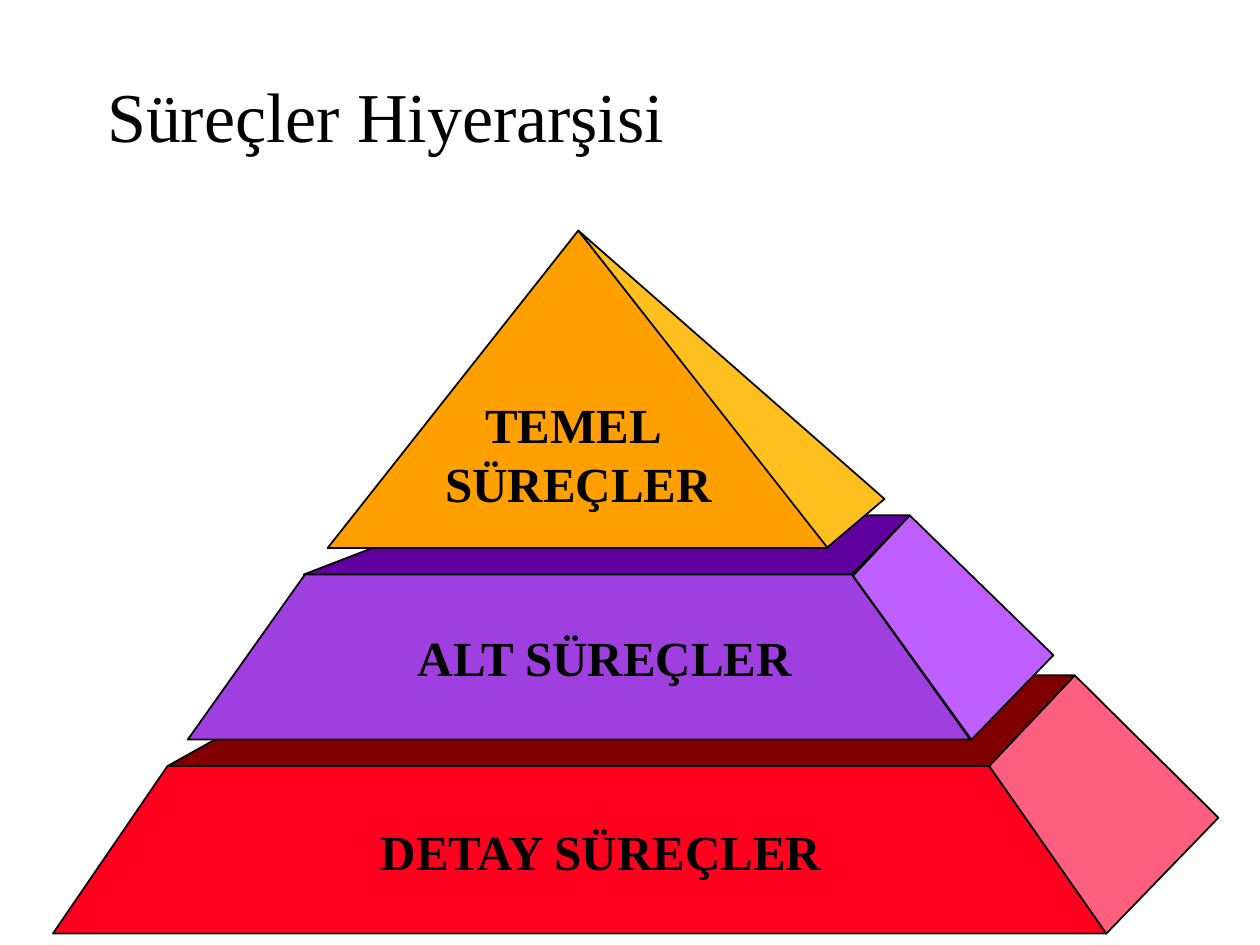
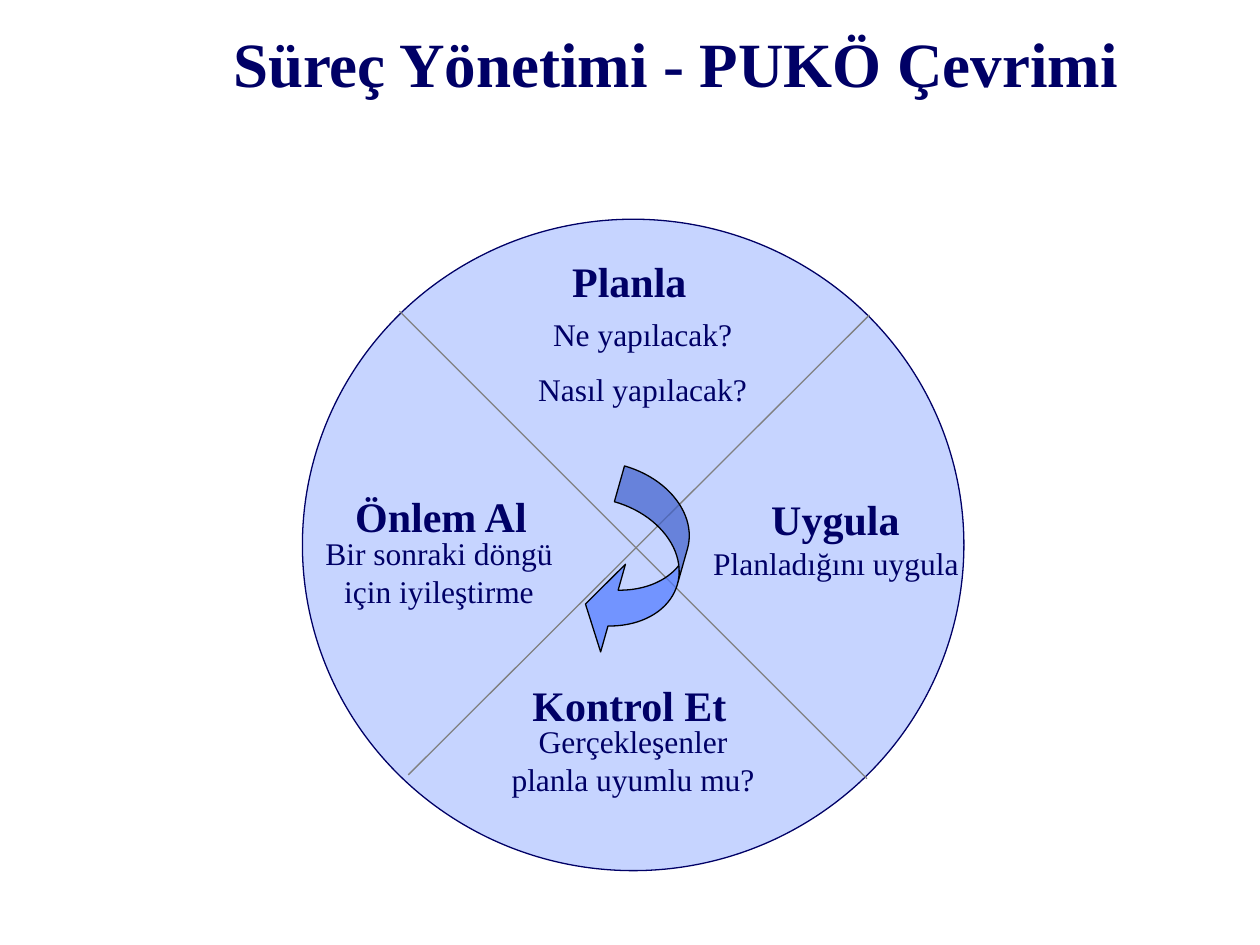
from lxml import etree
from pptx import Presentation
from pptx.dml.color import RGBColor
from pptx.enum.shapes import MSO_CONNECTOR, MSO_SHAPE
from pptx.enum.text import MSO_ANCHOR, MSO_AUTO_SIZE, PP_ALIGN
from pptx.oxml.ns import qn
from pptx.util import Inches, Pt

FONT = "Times New Roman"
COLORS = {
    "black": "000000", "navy": "000066", "gray": "808080",
    "circle": "8FAAFF", "arrow": "4F79FF",
    "detail_side": "FF5F7F", "detail_top": "800000", "detail_front": "FF001F",
    "sub_side": "BF5FFF", "sub_top": "5F009F", "sub_front": "9F3FDF",
    "main_side": "FFBF1F", "main_front": "FF9F00",
}


def paint(shape, fill, line, width, opacity=100):
    """Give a shape a solid fill, with opacity in percent, and an outline."""
    shape.shadow.inherit = False
    shape.fill.solid()
    shape.fill.fore_color.rgb = RGBColor.from_string(COLORS[fill])
    if opacity < 100:
        color = shape.fill._xPr.find(qn("a:solidFill"))[0]
        etree.SubElement(color, qn("a:alpha"), val=str(opacity * 1000))
    shape.line.color.rgb = RGBColor.from_string(COLORS[line])
    shape.line.width = Pt(width)


def write(shape, text, size, color, bold=False, align=PP_ALIGN.CENTER, gap=0):
    """Fill a shape with one paragraph per line; gap is the space between them."""
    text_frame = shape.text_frame
    text_frame.text = text
    for index, paragraph in enumerate(text_frame.paragraphs):
        paragraph.alignment = align
        paragraph.space_before = Pt(gap if index else 0)
        for run in paragraph.runs:
            run.font.name = FONT
            run.font.size = Pt(size)
            run.font.bold = bold
            run.font.color.rgb = RGBColor.from_string(COLORS[color])


presentation = Presentation()
presentation.slide_width = Inches(10)
presentation.slide_height = Inches(7.5)

# Slides and titles
titles = [
    ("Süreçler Hiyerarşisi", (0.75, 0.28, 8.5, 1.25), 40, "black", False),
    ("Süreç Yönetimi - PUKÖ Çevrimi", (1.75, 0.08, 7.67, 0.83), 36, "navy", True),
]
slides = []
for text, box, size, color, bold in titles:
    slide = presentation.slides.add_slide(presentation.slide_layouts[5])
    title = slide.shapes.title
    title.left, title.top, title.width, title.height = map(Inches, box)
    title.text_frame.vertical_anchor = MSO_ANCHOR.MIDDLE
    title.text_frame.auto_size = MSO_AUTO_SIZE.NONE
    write(title, text, size, color, bold, PP_ALIGN.LEFT)
    slides.append(slide)
pyramid_slide, cycle_slide = slides

# Pyramid faces, from back to front
faces = [
    ("detail_side", [(8.78, 7.41), (7.85, 6.08), (8.53, 5.36), (9.67, 6.49)]),
    ("detail_top", [(1.33, 6.08), (7.85, 6.08), (8.53, 5.36), (2.62, 5.36)]),
    ("detail_front", [(0.42, 7.41), (8.78, 7.41), (7.85, 6.08), (1.33, 6.08)]),
    ("sub_side", [(6.77, 4.57), (7.71, 5.87), (8.36, 5.2), (7.22, 4.09)]),
    ("sub_top", [(2.41, 4.56), (6.76, 4.56), (7.22, 4.09), (3.63, 4.09)]),
    ("sub_front", [(1.49, 5.87), (7.7, 5.87), (6.76, 4.56), (2.42, 4.56)]),
    ("main_side", [(6.56, 4.35), (7.02, 3.96), (4.59, 1.83)]),
    ("main_front", [(2.6, 4.35), (6.57, 4.35), (4.59, 1.83)]),
]
for fill, corners in faces:
    points = [(Inches(x), Inches(y)) for x, y in corners]
    builder = pyramid_slide.shapes.build_freeform(*points[0])
    builder.add_line_segments(points[1:], close=True)
    paint(builder.convert_to_shape(), fill, "black", 1)

# Circle and its two diagonals
circle = cycle_slide.shapes.add_shape(
    MSO_SHAPE.OVAL, Inches(2.4), Inches(1.74), Inches(5.25), Inches(5.17))
paint(circle, "circle", "navy", 0.75, opacity=50)

for ends in [(6.9, 2.5, 3.24, 6.15), (3.17, 2.47, 6.88, 6.18)]:
    diagonal = cycle_slide.shapes.add_connector(
        MSO_CONNECTOR.STRAIGHT, *map(Inches, ends))
    diagonal.line.color.rgb = RGBColor.from_string(COLORS["gray"])
    diagonal.line.width = Pt(0.75)
    etree.SubElement(diagonal._element.spPr, qn("a:effectLst"))

# Labels: slide, size, colour, bold, wrap, then the texts with their boxes
label_groups = [
    (pyramid_slide, 28, "black", True, False, [
        ("TEMEL \nSÜREÇLER", (3.43, 3.08, 2.32, 1.03)),
        ("ALT SÜREÇLER", (3.19, 4.93, 3.22, 0.57)),
        ("DETAY SÜREÇLER", (2.88, 6.47, 3.78, 0.57)),
    ]),
    (cycle_slide, 24, "navy", True, False, [
        ("Önlem Al", (2.71, 3.84, 1.58, 0.5)),
        ("Planla", (4.44, 1.98, 1.11, 0.5)),
        ("Kontrol Et", (4.12, 5.34, 1.75, 0.5)),
        ("Uygula", (6.02, 3.87, 1.22, 0.5)),
    ]),
    (cycle_slide, 18, "navy", False, True, [
        ("Bir sonraki döngü için iyileştirme", (2.4, 4.19, 2.17, 0.7)),
        ("Ne yapılacak?\nNasıl yapılacak?", (4.14, 2.45, 1.92, 0.85)),
        ("Gerçekleşenler planla uyumlu mu?", (3.94, 5.68, 2.17, 0.7)),
        ("Planladığını uygula", (5.51, 4.27, 2.25, 0.4)),
    ]),
]
for slide, size, color, bold, wrap, labels in label_groups:
    for text, box in labels:
        label = slide.shapes.add_textbox(*map(Inches, box))
        label.text_frame.word_wrap = wrap
        label.text_frame.auto_size = MSO_AUTO_SIZE.SHAPE_TO_FIT_TEXT
        write(label, text, size, color, bold, gap=10 if wrap else 0)

# Turning arrow in the middle of the cycle
arrow = cycle_slide.shapes.add_shape(
    MSO_SHAPE.CURVED_LEFT_ARROW, Inches(4.74), Inches(3.76), Inches(0.66), Inches(1.5))
arrow.rotation = 15.8
for index, value in enumerate([0.447, 1.095, 0.333]):
    arrow.adjustments[index] = value
paint(arrow, "arrow", "black", 0.75, opacity=70)

presentation.save("out.pptx")
